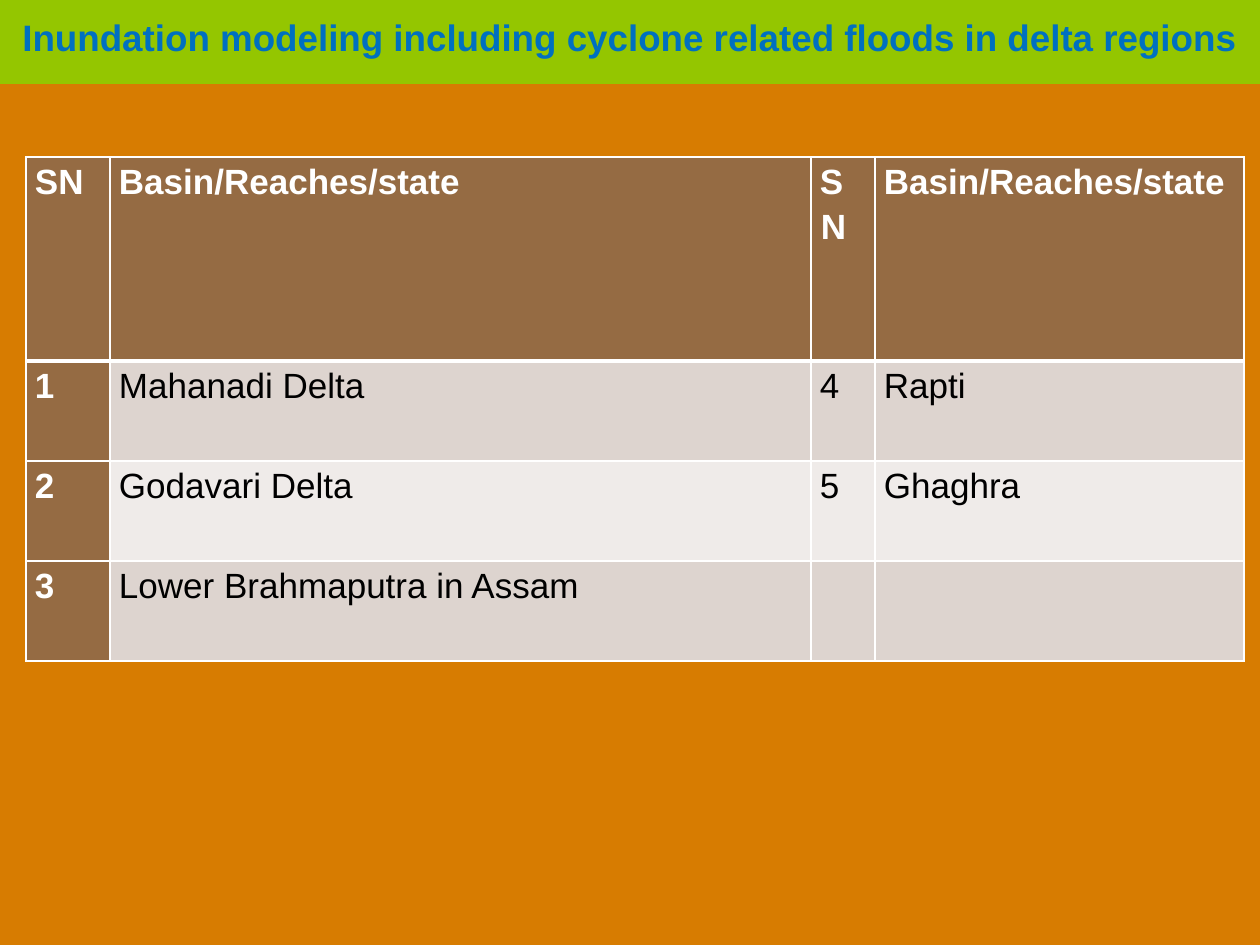
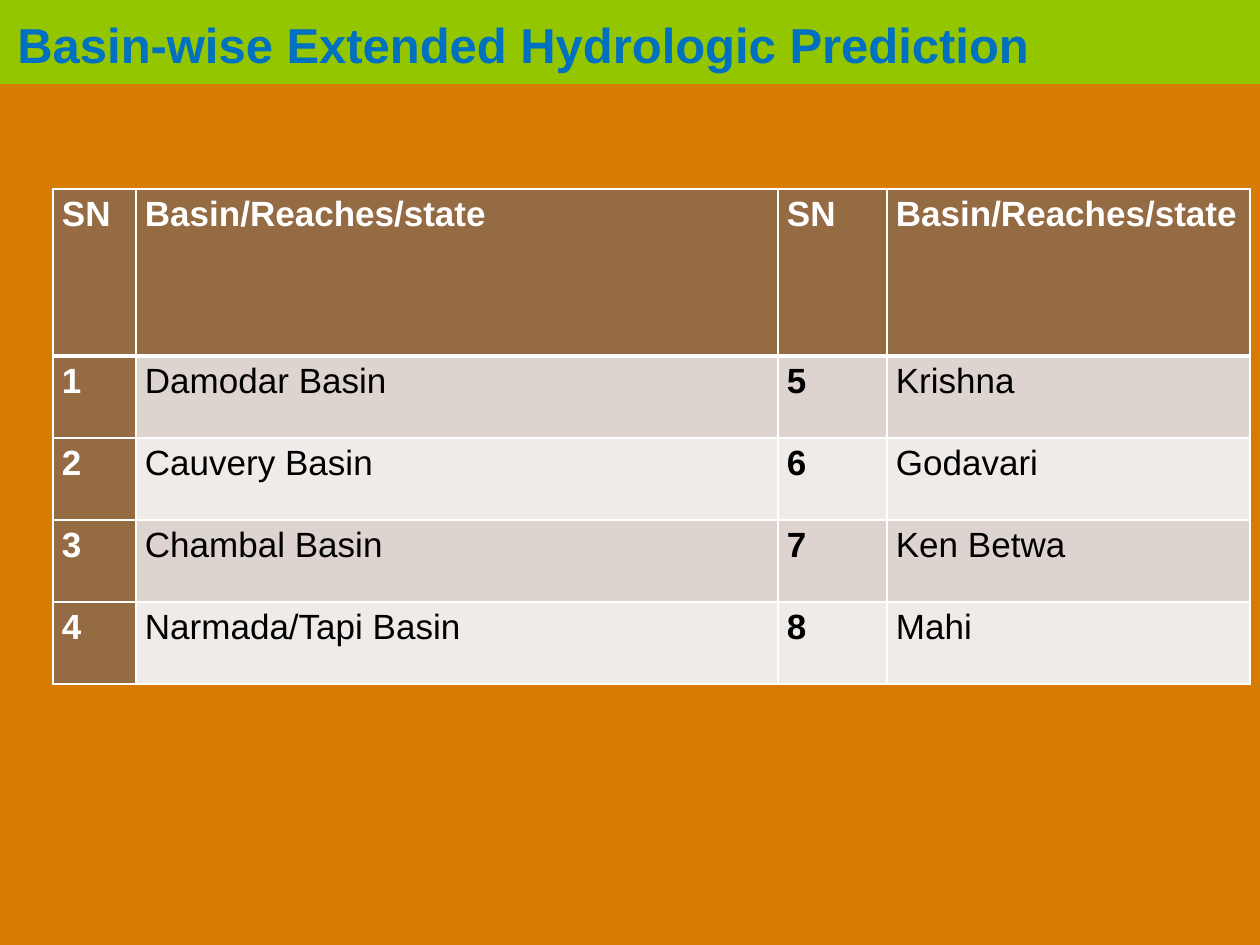
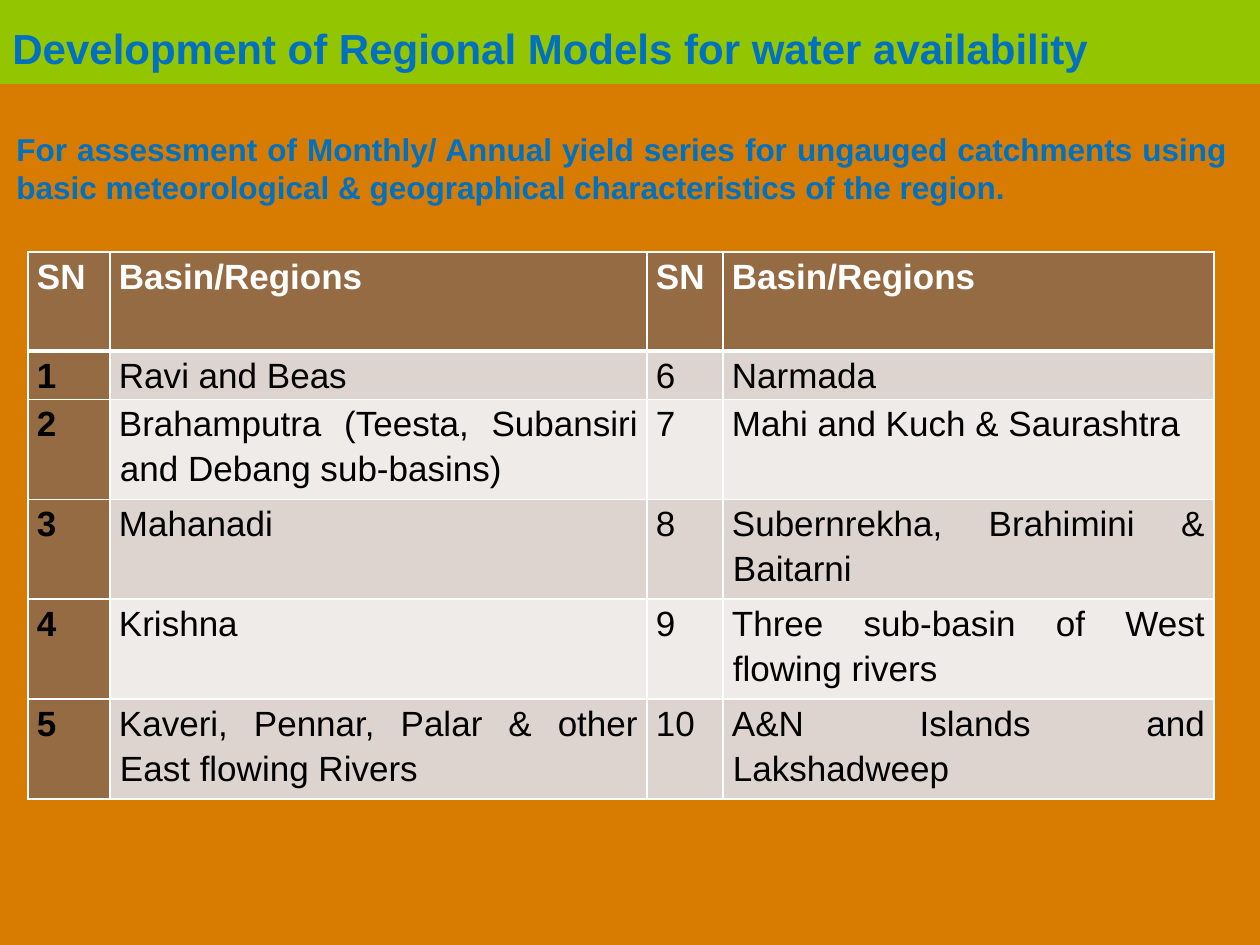
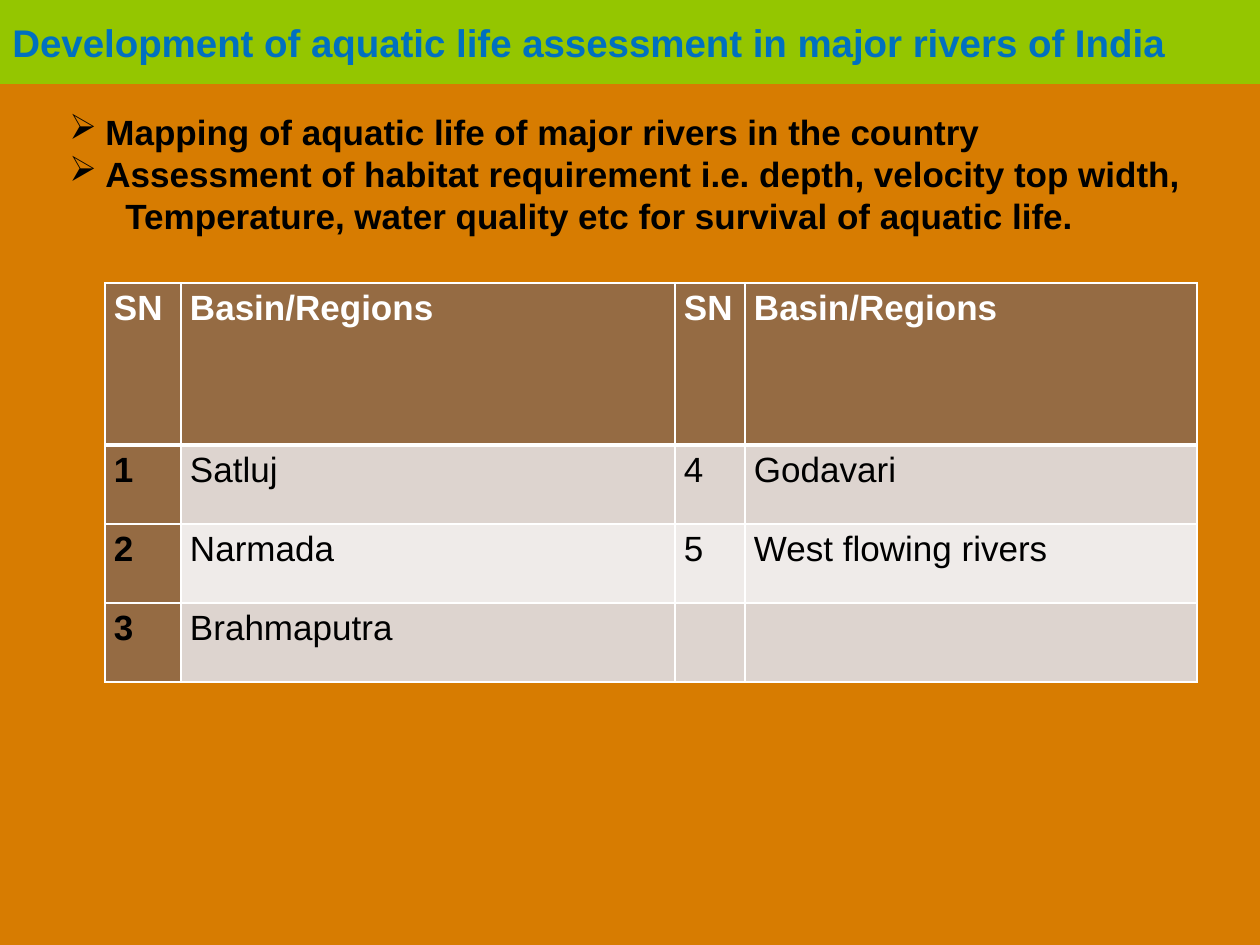
"""Build four slides on river basin studies: inundation, prediction, regional models, aquatic life."""
from lxml import etree
from pptx import Presentation
from pptx import util as u
from pptx.dml.color import RGBColor
from pptx.enum import shapes, text
from pptx.oxml.ns import qn

PX = 914400 / 126
FONT = "Arial"
ORANGE = RGBColor(0xD7, 0x7C, 0x01)
GREEN = RGBColor(0x94, 0xC6, 0x00)
BLUE = RGBColor(0x00, 0x70, 0xC0)
BROWN = RGBColor(0x95, 0x6B, 0x43)
SAND = RGBColor(0xDD, 0xD4, 0xCF)
PALE = RGBColor(0xEF, 0xEB, 0xE9)
WHITE = RGBColor(0xFF, 0xFF, 0xFF)
BLACK = RGBColor(0x00, 0x00, 0x00)

LEFT = text.PP_ALIGN.LEFT
JUSTIFY = text.PP_ALIGN.JUSTIFY
TITLE_FRAME = {"word_wrap": True, "vertical_anchor": text.MSO_ANCHOR.MIDDLE}
BODY_FRAME = {"word_wrap": True, "auto_size": text.MSO_AUTO_SIZE.SHAPE_TO_FIT_TEXT}
CELL_LAYOUT = {"alignment": JUSTIFY, "line_spacing": 1.15}


def px(length):
    """Turn whole pixels into EMU."""
    return u.Emu(round(length * PX))


def apply(target, values):
    """Set each attribute of target from a dict."""
    for attribute, value in values.items():
        setattr(target, attribute, value)


def write(paragraph, words, size, color, bold=True):
    """Add one formatted run to a paragraph."""
    run = paragraph.add_run()
    run.text = words
    apply(run.font, {"name": FONT, "size": u.Pt(size), "bold": bold})
    run.font.color.rgb = color


def set_indent(paragraph, margin, first_line):
    """Set left margin and first-line indent, and return the properties."""
    properties = paragraph._p.get_or_add_pPr()
    properties.set("marL", str(px(margin)))
    properties.set("indent", str(px(first_line)))
    return properties


def add_text(slide, box, words, size, align, frame_format):
    """Add a blue bold text box with one paragraph."""
    frame = slide.shapes.add_textbox(*map(px, box)).text_frame
    apply(frame, frame_format)
    frame.paragraphs[0].alignment = align
    write(frame.paragraphs[0], words, size, BLUE)


def add_topic(deck, title, size, box):
    """Start a slide with the green band and its title."""
    slide = deck.slides.add_slide(deck.slide_layouts[6])
    band = slide.shapes.add_shape(shapes.MSO_SHAPE.RECTANGLE, 0, 0, deck.slide_width, px(84))
    band.shadow.inherit = False
    band.fill.solid()
    band.fill.fore_color.rgb = GREEN
    band.line.fill.background()
    add_text(slide, box, title, size, LEFT, TITLE_FRAME)
    return slide


def add_aims(slide, box, aims):
    """Add the aims: (words, has arrow bullet) pairs."""
    frame = slide.shapes.add_textbox(*map(px, box)).text_frame
    apply(frame, BODY_FRAME)
    for index, (words, has_arrow) in enumerate(aims):
        aim = frame.add_paragraph() if index else frame.paragraphs[0]
        aim.alignment = JUSTIFY
        write(aim, words, 20, BLACK)
        if has_arrow:
            properties = set_indent(aim, 72, -36)
            etree.SubElement(properties, qn("a:buChar")).set("char", "➢")
        else:
            set_indent(aim, 92, 0)


def add_borders(cell, widths):
    """Draw white cell borders with widths in points by side."""
    properties = cell._tc.get_or_add_tcPr()
    for side, width in widths.items():
        border = etree.SubElement(properties, qn(f"a:ln{side}"), w=str(u.Pt(width)))
        paint = etree.SubElement(border, qn("a:solidFill"))
        etree.SubElement(paint, qn("a:srgbClr"), val=str(WHITE))


def fill_cell(cell, words, row, color, bold, fill):
    """Format one table cell and write its words."""
    add_borders(cell, {"L": 1, "R": 1, "T": 3 if row == 1 else 1, "B": 1 if row else 3})
    cell.fill.solid()
    cell.fill.fore_color.rgb = fill
    apply(cell, {"margin_left": px(9), "margin_right": px(9), "margin_top": 0, "margin_bottom": 0})
    if words:
        entry = cell.text_frame.paragraphs[0]
        apply(entry, CELL_LAYOUT)
        set_indent(entry, 1, -1)
        write(entry, words, 20, color, bold)


def add_basins(slide, corner, widths, heights, heading, basins,
               number_color=WHITE, bold_columns=(0,)):
    """Add a table of basins, numbered down the left half and then the right."""
    half = len(heights) - 1
    numbered = [(str(n), name) for n, name in enumerate(basins, 1)]
    numbered += [("", "")] * (2 * half - len(basins))
    rows = [("SN", heading) * 2]
    rows += [left + right for left, right in zip(numbered[:half], numbered[half:])]
    extent = (*corner, sum(widths), sum(heights))
    table = slide.shapes.add_table(len(rows), len(widths), *map(px, extent)).table
    for column, width in zip(table.columns, widths):
        column.width = px(width)
    for r, (row, height) in enumerate(zip(rows, heights)):
        table.rows[r].height = px(height)
        for c, words in enumerate(row):
            if r == 0:
                look = WHITE, True, BROWN
            elif c == 0:
                look = number_color, True, BROWN
            else:
                look = BLACK, c in bold_columns, SAND if r % 2 else PALE
            fill_cell(table.cell(r, c), words, r, *look)


def main():
    """Build and save the deck."""
    deck = Presentation()
    apply(deck, {"slide_width": px(1260), "slide_height": px(945)})
    backdrop = deck.slide_master.background.fill
    backdrop.solid()
    backdrop.fore_color.rgb = ORANGE

    inundation = add_topic(
        deck, "Inundation modeling including cyclone related floods in delta regions",
        21, (10, 0, 1250, 73))
    add_basins(inundation, (26, 157), (84, 701, 64, 369), (204, 100, 100, 100),
               "Basin/Reaches/state",
               ("Mahanadi Delta", "Godavari Delta", "Lower Brahmaputra in Assam",
                "Rapti", "Ghaghra"))

    prediction = add_topic(deck, "Basin-wise Extended Hydrologic Prediction",
                           28, (5, 0, 1255, 87))
    add_basins(prediction, (53, 189), (83, 642, 109, 363), (167, 82, 82, 82, 82),
               "Basin/Reaches/state",
               ("Damodar Basin", "Cauvery Basin", "Chambal Basin", "Narmada/Tapi Basin",
                "Krishna", "Godavari", "Ken Betwa", "Mahi"), bold_columns=(0, 2))

    availability = add_topic(deck, "Development of Regional Models for water availability",
                             24, (0, 0, 1260, 95))
    add_basins(availability, (28, 252), (82, 537, 76, 491), (99, 48, 100, 100, 100, 100),
               "Basin/Regions",
               ("Ravi and Beas", "Brahamputra (Teesta, Subansiri and Debang sub-basins)",
                "Mahanadi", "Krishna", "Kaveri, Pennar, Palar & other East flowing Rivers",
                "Narmada", "Mahi and Kuch & Saurashtra", "Subernrekha, Brahimini & Baitarni",
                "Three sub-basin of West flowing rivers", "A&N Islands and Lakshadweep"),
               number_color=BLACK)
    add_text(availability, (4, 124, 1236, 89),
             "For assessment of Monthly/ Annual yield series for ungauged catchments using "
             "basic meteorological & geographical characteristics of the region.",
             18, JUSTIFY, BODY_FRAME)

    aquatic_life = add_topic(
        deck, "Development of aquatic life assessment in major rivers of India",
        22, (0, 0, 1260, 84))
    add_basins(aquatic_life, (105, 283), (76, 494, 70, 452), (162, 79, 79, 79),
               "Basin/Regions",
               ("Satluj", "Narmada", "Brahmaputra", "Godavari", "West flowing rivers"),
               number_color=BLACK)
    add_aims(aquatic_life, (21, 104, 1218, 140), (
        ("Mapping of aquatic life of major rivers in the country", True),
        ("Assessment of habitat requirement i.e. depth, velocity top width,", True),
        ("Temperature, water quality etc for survival of aquatic life.", False)))

    deck.save("out.pptx")


if __name__ == "__main__":
    main()
